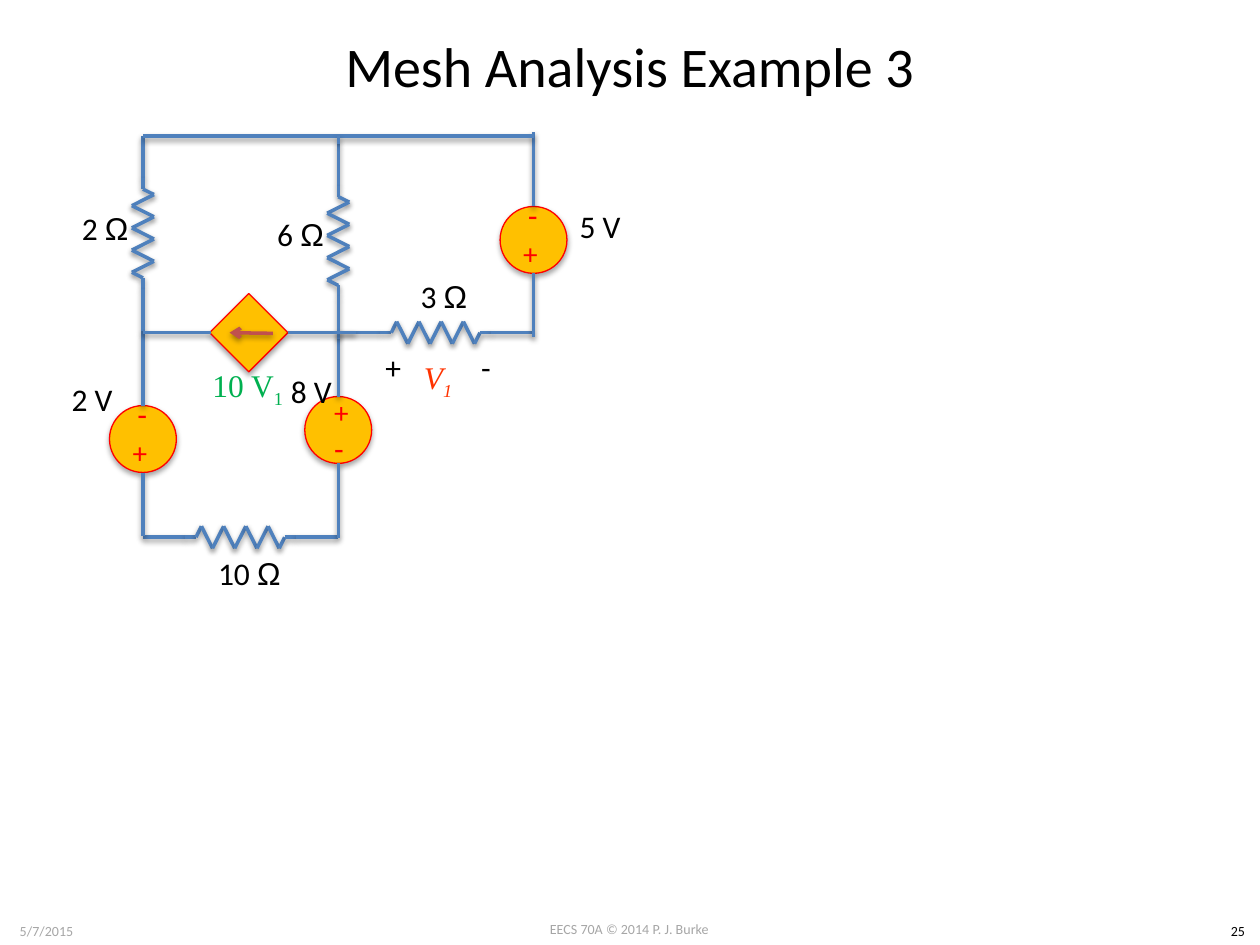
from lxml import etree
from pptx import Presentation
from pptx.dml.color import RGBColor
from pptx.enum.shapes import MSO_CONNECTOR, MSO_SHAPE
from pptx.enum.text import MSO_ANCHOR, MSO_AUTO_SIZE, PP_ALIGN
from pptx.oxml.ns import qn
from pptx.util import Pt

LINE = MSO_CONNECTOR.STRAIGHT
OVAL, SQUARE = MSO_SHAPE.OVAL, MSO_SHAPE.RECTANGLE
LEFT, CENTER = PP_ALIGN.LEFT, PP_ALIGN.CENTER
MIDDLE = MSO_ANCHOR.MIDDLE
FIT_SHAPE = MSO_AUTO_SIZE.SHAPE_TO_FIT_TEXT

COLORS = {
    "black": "000000", "footer": "A6A6A6", "wire": "4F81BD",
    "fill": "FFC000", "red": "FF0000", "arrow": "C0504D",
    "green": "00B050", "orange": "FF3300",
}
TITLE_ONLY = 5
SPAN = 111.6       # length of a resistor with its leads
RADIUS = 19.1      # circle of a voltage source


def color(name):
    return RGBColor.from_string(COLORS[name])


def add_shadow(shape, opacity, distance):
    """Give the shape a soft shadow straight below it."""
    effects = etree.SubElement(shape._element.spPr, qn("a:effectLst"))
    shadow = etree.SubElement(
        effects, qn("a:outerShdw"), blurRad=str(Pt(3.1)),
        dist=str(Pt(distance)), dir="5400000", rotWithShape="0")
    black = etree.SubElement(shadow, qn("a:srgbClr"), val=COLORS["black"])
    etree.SubElement(black, qn("a:alpha"), val=str(opacity * 1000))


def add_wire(shapes, start, end, name="wire"):
    wire = shapes.add_connector(LINE, *[Pt(value) for value in (*start, *end)])
    wire.line.color.rgb = color(name)
    wire.line.width = Pt(2)
    add_shadow(wire, 38, 1.6)
    return wire


def add_body(shapes, kind, center, size, rotation=0):
    """Add the outline of a source around its center."""
    x, y = center
    body = shapes.add_shape(kind, Pt(x - size / 2), Pt(y - size / 2), Pt(size), Pt(size))
    body.rotation = rotation
    body.fill.solid()
    body.fill.fore_color.rgb = color("fill")
    body.line.color.rgb = color("red")
    body.line.width = Pt(0.75)
    add_shadow(body, 35, 1.8)


def add_span(para, text, size, name, font="Calibri", italic=False, subscript=False):
    span = para.add_run()
    span.text = text
    span.font.size = Pt(size)
    span.font.name = font
    span.font.italic = italic
    span.font.color.rgb = color(name)
    if subscript:
        span.font._element.set("baseline", "-25000")


def add_text(shapes, left, top, width, height, align=CENTER):
    """Add a text box and return it with its first paragraph."""
    box = shapes.add_textbox(Pt(left), Pt(top), Pt(width), Pt(height))
    box.text_frame.word_wrap = True
    para = box.text_frame.paragraphs[0]
    para.alignment = align
    return box, para


def add_label(shapes, left, top, width, text, unit=""):
    box, para = add_text(shapes, left, top, width, 29, LEFT)
    box.text_frame.word_wrap = False
    box.text_frame.auto_size = FIT_SHAPE
    add_span(para, text, 18, "black")
    if unit:
        add_span(para, unit, 18, "black", "Arial")


def add_variable(shapes, left, top, width, height, text, name, italic=False):
    """Add a variable with the subscript 1."""
    box, para = add_text(shapes, left, top, width, height)
    box.text_frame.vertical_anchor = MIDDLE
    add_span(para, text, 18, name, "Times New Roman", italic)
    add_span(para, "1", 18, name, "Times New Roman", italic, True)


def add_resistor(page, left, top, vertical=False):
    """Draw a zigzag of eight peaks between two leads."""
    peak, amplitude, first = 6.35, 6.3, 33.4
    stations = [(0, 0), (24, 0), (30.3, 0)]
    stations += [(first + peak * i, amplitude * (-1) ** i) for i in range(8)]
    stations += [(81, 0), (87.3, 0), (SPAN, 0)]
    if vertical:
        points = [(left + side, top + along) for along, side in stations]
    else:
        points = [(left + along, top - side) for along, side in stations]
    group = page.shapes.add_group_shape()
    for start, end in zip(points, points[1:]):
        add_wire(group.shapes, start, end)


def add_voltage_source(page, x, top, plus_up):
    """Draw a circle with its signs and leads; the lead at minus is longer."""
    plus_lead, minus_lead = 36.5, 42.4
    upper, lower = (plus_lead, minus_lead) if plus_up else (minus_lead, plus_lead)
    middle = top + upper + RADIUS
    group = page.shapes.add_group_shape()
    add_body(group.shapes, OVAL, (x, middle), 2 * RADIUS)
    toward_plus = -1 if plus_up else 1
    for sign, size, side in (("+", 16.6, toward_plus), ("-", 18, -toward_plus)):
        box, para = add_text(group.shapes, x - 9.4, middle + 10.1 * side - 11.9, 18.8, 23.8)
        box.rotation = 0 if plus_up else 180
        box.text_frame.vertical_anchor = MIDDLE
        add_span(para, sign, size, "red")
    add_wire(group.shapes, (x, top), (x, middle - RADIUS))
    add_wire(group.shapes, (x, middle + RADIUS), (x, middle + RADIUS + lower))


def add_current_source(page, x, y):
    add_body(page.shapes, SQUARE, (x, y), 31.7, 315)
    for start in (x - 60.5, x + 22.4):
        add_wire(page.shapes, (start + 38.7, y), (start, y))
    arrow = add_wire(page.shapes, (x + 13.7, y + 0.4), (x - 11, y), "arrow")
    etree.SubElement(arrow.line._get_or_add_ln(), qn("a:tailEnd"), type="arrow")


def add_circuit(page, left, top):
    """Draw the three meshes from their upper left corner."""
    columns = [left + SPAN * i for i in range(3)]
    middle, bottom = top + 112.3, top + 229.2
    first, second, third = columns

    add_resistor(page, second, middle)
    add_resistor(page, first, bottom)
    add_voltage_source(page, second, middle, True)
    add_voltage_source(page, first, middle - 0.7, False)
    add_resistor(page, first, top, True)
    add_resistor(page, second, top + 4.3, True)
    add_voltage_source(page, third, top - 2.2, False)
    add_wire(page.shapes, (third, top), (first, top))
    add_wire(page.shapes, (second, top + 4.3), (second, top))
    add_current_source(page, left + 60.5, middle)

    for x, y, width, text, unit in (
            (151.6, 77, 41.8, "3 ", "Ω"), (35.8, 235.4, 51, "10 ", "Ω"),
            (-42, 38.1, 41.8, "2 ", "Ω"), (69.6, 41.7, 41.8, "6 ", "Ω"),
            (77.5, 131, 38.2, "8 V", ""), (-47.8, 136, 38.2, "2 V", ""),
            (242.4, 36.7, 38.2, "5 V", ""),
            (131.5, 117.3, 23.8, "+", ""), (186.2, 117.3, 20.2, "-", "")):
        add_label(page.shapes, left + x, top + y, width, text, unit)
    add_variable(page.shapes, left + 17, top + 117.3, 85.7, 52.6, "10 V", "green")
    add_variable(page.shapes, left + 140.9, top + 117.3, 55.4, 43.9, "V", "orange", True)


def add_title(page, left, top, width, height):
    title = page.shapes.title
    title.left, title.top = Pt(left), Pt(top)
    title.width, title.height = Pt(width), Pt(height)
    title.text_frame.vertical_anchor = MIDDLE
    para = title.text_frame.paragraphs[0]
    para.alignment = CENTER
    add_span(para, "Mesh Analysis Example 3", 32, "black")


def add_footer(page, top):
    for left, y, width, text, name in (
            (275.8, top, 167.8, "EECS 70A © 2014 P. J. Burke", "footer"),
            (0, top + 0.7, 53.3, "5/7/2015", "footer"),
            (694.8, top + 0.7, 25.2, "25", "black")):
        box, para = add_text(page.shapes, left, y, width, 17)
        box.text_frame.auto_size = FIT_SHAPE
        add_span(para, text, 8, name)


def main():
    deck = Presentation()
    deck.slide_width, deck.slide_height = Pt(720), Pt(540)
    page = deck.slides.add_slide(deck.slide_layouts[TITLE_ONLY])
    add_footer(page, 522.7)
    add_title(page, 36, -7.9, 648, 90)
    add_circuit(page, 81.7, 77.8)
    deck.save("out.pptx")


if __name__ == "__main__":
    main()
